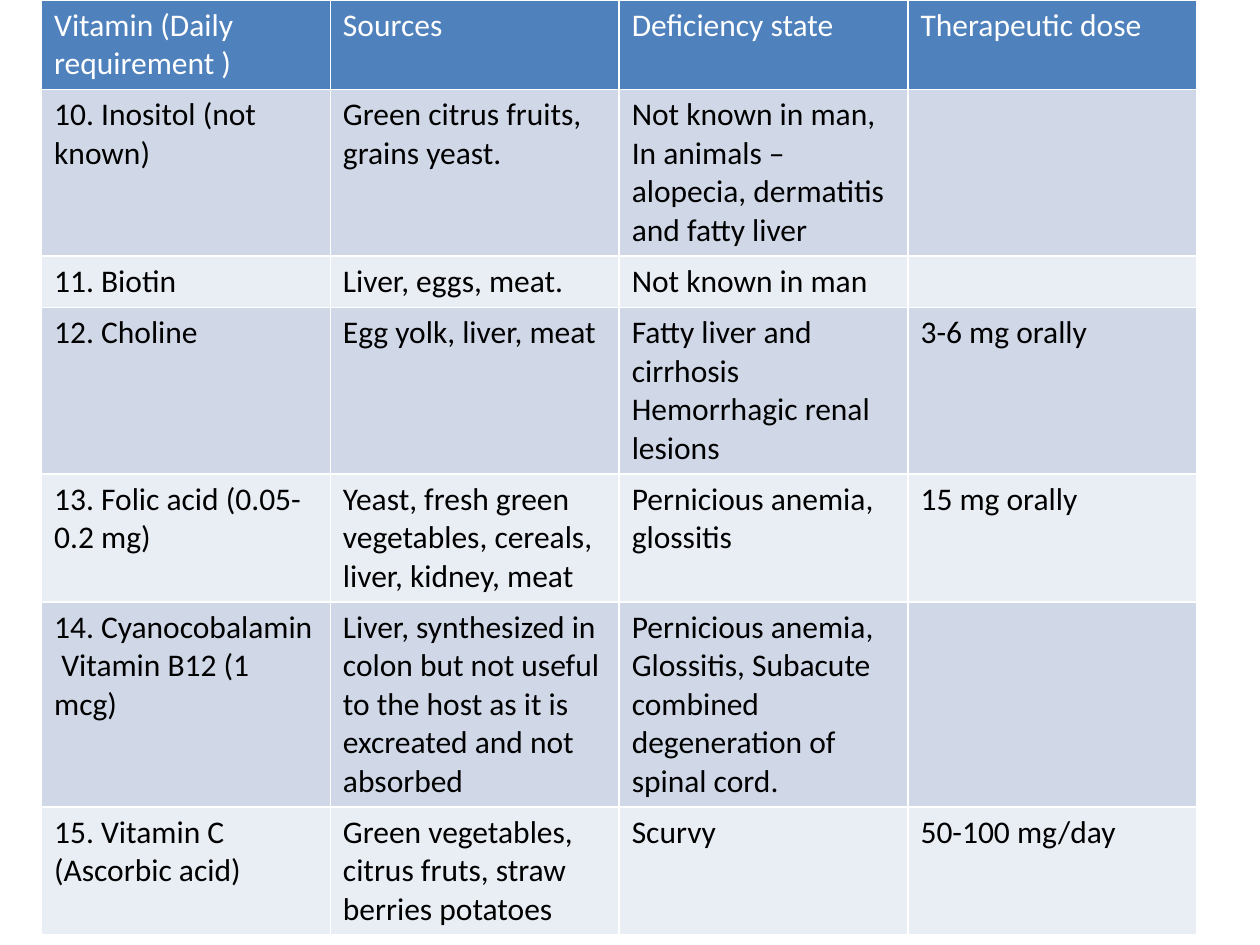
"""Build a slide with a table of vitamins, sources, deficiencies and doses."""
from dataclasses import dataclass

from pptx import Presentation
from pptx.dml.color import RGBColor
from pptx.util import Inches, Pt

BLANK_LAYOUT = 6
SLIDE_WIDTH, SLIDE_HEIGHT = 10, 7.5
TABLE_LEFT, TABLE_TOP, TABLE_WIDTH = 0.33, 0, 9.17
ROW_HEIGHT = 0.41

HEADINGS = ("Vitamin (Daily requirement )", "Sources", "Deficiency state", "Therapeutic dose")
VITAMINS = (
    ("10. Inositol (not known)", "Green citrus fruits, grains yeast.",
     "Not known in man, In animals – alopecia, dermatitis and fatty liver", ""),
    ("11. Biotin", "Liver, eggs, meat.", "Not known in man", ""),
    ("12. Choline", "Egg yolk, liver, meat",
     "Fatty liver and cirrhosis\nHemorrhagic renal lesions", "3-6 mg orally"),
    ("13. Folic acid (0.05-0.2 mg)",
     "Yeast, fresh green vegetables, cereals, liver, kidney, meat",
     "Pernicious anemia, glossitis", "15 mg orally"),
    ("14. Cyanocobalamin\n Vitamin B12 (1 mcg)",
     "Liver, synthesized in colon but not useful to the host as it is "
     "excreated and not absorbed",
     "Pernicious anemia, Glossitis, Subacute combined degeneration of spinal cord.", ""),
    ("15. Vitamin C (Ascorbic acid)",
     "Green vegetables, citrus fruts, straw berries potatoes",
     "Scurvy", "50-100 mg/day"),
)


@dataclass(frozen=True)
class Theme:
    """Colours and type of the table."""
    font: str = "Calibri"
    size: int = 18
    header_fill: str = "4F81BD"
    header_text: str = "FFFFFF"
    body_text: str = "000000"
    bands: tuple = ("D0D8E8", "E9EDF4")


THEME = Theme()


def write_cell(cell, text, fill, color):
    """Fill a cell and write its lines run by run."""
    cell.fill.solid()
    cell.fill.fore_color.rgb = RGBColor.from_string(fill)
    paragraph = cell.text_frame.paragraphs[0]
    paragraph.font.size = Pt(THEME.size)
    if not text:
        return
    for index, line in enumerate(text.split("\n")):
        if index:
            paragraph.add_line_break()
        run = paragraph.add_run()
        run.text = line
        run.font.name = THEME.font
        run.font.size = Pt(THEME.size)
        run.font.bold = False
        run.font.color.rgb = RGBColor.from_string(color)


def write_row(row, texts, fill, color):
    """Write one table row in a single fill and text colour."""
    row.height = Inches(ROW_HEIGHT)
    for cell, text in zip(row.cells, texts):
        write_cell(cell, text, fill, color)


def add_vitamin_table(slide):
    """Add the table with equal columns and alternating bands."""
    row_count = len(VITAMINS) + 1
    table = slide.shapes.add_table(
        row_count, len(HEADINGS), Inches(TABLE_LEFT), Inches(TABLE_TOP),
        Inches(TABLE_WIDTH), Inches(ROW_HEIGHT * row_count)).table
    write_row(table.rows[0], HEADINGS, THEME.header_fill, THEME.header_text)
    for index, vitamin in enumerate(VITAMINS):
        band = THEME.bands[index % len(THEME.bands)]
        write_row(table.rows[index + 1], vitamin, band, THEME.body_text)


def main():
    """Create and save the presentation."""
    presentation = Presentation()
    presentation.slide_width = Inches(SLIDE_WIDTH)
    presentation.slide_height = Inches(SLIDE_HEIGHT)
    slide = presentation.slides.add_slide(presentation.slide_layouts[BLANK_LAYOUT])
    add_vitamin_table(slide)
    presentation.save("out.pptx")


if __name__ == "__main__":
    main()
